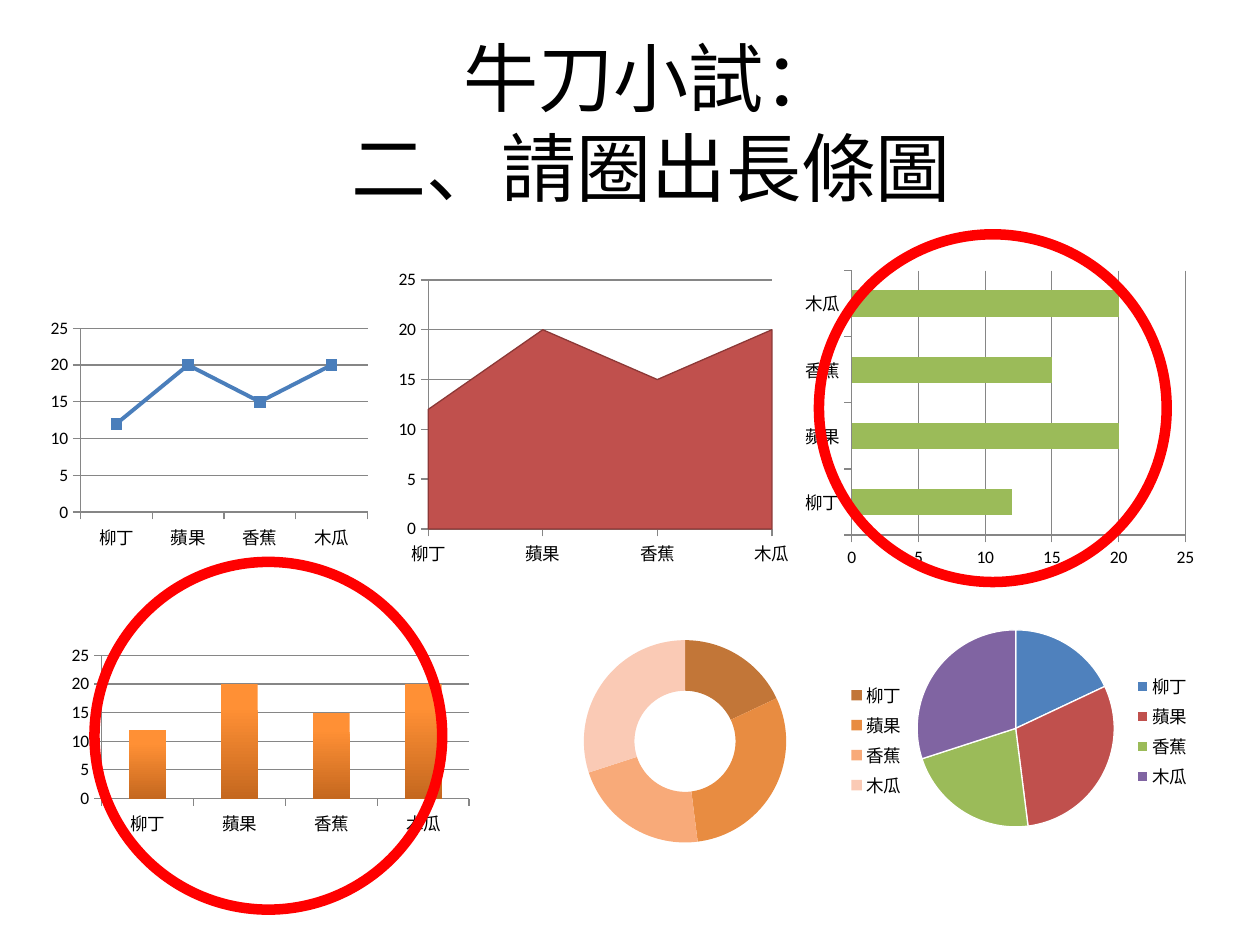
import pptx
import pptx.chart.data
import pptx.dml.color
import pptx.enum.chart
import pptx.enum.shapes
import pptx.enum.text
import pptx.oxml
import pptx.util
from pptx.util import Inches

FRUITS = ["柳丁", "蘋果", "香蕉", "木瓜"]
COUNTS = [12, 20, 15, 20]
SHARES = [18, 30, 22, 30]
KINDS = pptx.enum.chart.XL_CHART_TYPE
GREY = "868686"
THEME_COLOURS = ["4F81BD", "C0504D", "9BBB59", "8064A2"]
ORANGE_SHADES = ["C27638", "E88C41", "F8AA79", "FACAB5"]


def colour(code):
    return pptx.dml.color.RGBColor.from_string(code)


def paint(fill, code):
    fill.solid()
    fill.fore_color.rgb = colour(code)


def draw_line(line, code, width):
    line.color.rgb = colour(code)
    line.width = pptx.util.Pt(width)


def place_plot(chart, plot_box):
    """Fix the inner plot area, given as fractions of the chart."""
    area = chart._chartSpace.chart.plotArea
    for old in area.xpath("c:layout"):
        area.remove(old)
    left, top, width, height = plot_box
    area.insert(0, pptx.oxml.parse_xml(
        '<c:layout xmlns:c="http://schemas.openxmlformats.org/drawingml/2006/chart">'
        '<c:manualLayout><c:layoutTarget val="inner"/>'
        '<c:xMode val="edge"/><c:yMode val="edge"/>'
        f'<c:x val="{left}"/><c:y val="{top}"/><c:w val="{width}"/><c:h val="{height}"/>'
        '</c:manualLayout></c:layout>'))


def add_chart(page, kind, box, values, plot_box):
    data = pptx.chart.data.CategoryChartData()
    data.categories = FRUITS
    data.add_series("Series 1", values)
    chart = page.shapes.add_chart(kind, *map(Inches, box), data).chart
    chart.has_title = False
    chart.has_legend = False
    chart.font.name = "Calibri"
    chart.font.size = pptx.util.Pt(10)
    chart.font.color.rgb = colour("000000")
    place_plot(chart, plot_box)
    return chart


def add_axis_chart(page, kind, box, plot_box):
    """Add a chart of the counts and return its only series."""
    chart = add_chart(page, kind, box, COUNTS, plot_box)
    chart.plots[0].vary_by_categories = False
    for axis in (chart.category_axis, chart.value_axis):
        axis.major_tick_mark = pptx.enum.chart.XL_TICK_MARK.OUTSIDE
        axis.minor_tick_mark = pptx.enum.chart.XL_TICK_MARK.NONE
        draw_line(axis.format.line, GREY, 0.75)
    scale = chart.value_axis
    scale.minimum_scale, scale.maximum_scale, scale.major_unit = 0, 25, 5
    scale.has_major_gridlines = True
    draw_line(scale.major_gridlines.format.line, GREY, 0.75)
    if kind in (KINDS.BAR_CLUSTERED, KINDS.COLUMN_CLUSTERED):
        chart.plots[0].gap_width = 150
    return chart.plots[0].series[0]


def add_round_chart(page, kind, box, plot_box, codes, edge=None):
    chart = add_chart(page, kind, box, SHARES, plot_box)
    chart.has_legend = True
    chart.legend.position = pptx.enum.chart.XL_LEGEND_POSITION.RIGHT
    chart.legend.include_in_layout = False
    for index, code in enumerate(codes):
        look = chart.plots[0].series[0].points[index].format
        paint(look.fill, code)
        if edge:
            draw_line(look.line, edge, 0.75)
        else:
            look.line.fill.background()


def add_title(page, text):
    box = page.shapes.add_textbox(*map(Inches, (0.67, 0.21, 9, 1.51)))
    frame = box.text_frame
    frame.word_wrap = True
    frame.vertical_anchor = pptx.enum.text.MSO_ANCHOR.MIDDLE
    frame.text = text
    para = frame.paragraphs[0]
    para.alignment = pptx.enum.text.PP_ALIGN.CENTER
    for span in para.runs:
        span.font.name = "Calibri"
        span.font.size = pptx.util.Pt(42.9)
        span.font.color.rgb = colour("000000")


def add_answer_ring(page, left, top):
    ring = page.shapes.add_shape(pptx.enum.shapes.MSO_SHAPE.OVAL, Inches(left),
                                 Inches(top), Inches(2.76), Inches(2.76))
    ring.shadow.inherit = False
    ring.fill.background()
    draw_line(ring.line, "FF0000", 6)


def style_line(series):
    series.smooth = False
    draw_line(series.format.line, "4A7EBB", 2.25)
    series.marker.style = pptx.enum.chart.XL_MARKER_STYLE.SQUARE
    series.marker.size = 6
    paint(series.marker.format.fill, "4F81BD")
    draw_line(series.marker.format.line, "4A7EBB", 0.75)


def style_columns(series):
    fill = series.format.fill
    fill.gradient()
    fill.gradient_angle = 270
    for stop, code, position in zip(fill.gradient_stops, ("FF9035", "C5681F"), (0.2, 1)):
        stop.color.rgb = colour(code)
        stop.position = position


def main():
    deck = pptx.Presentation()
    deck.slide_width, deck.slide_height = Inches(10), Inches(7.5)
    page = deck.slides.add_slide(deck.slide_layouts[6])

    add_round_chart(page, KINDS.PIE, (7.13, 4.62, 2.42, 2.37),
                    (0.06, 0.16, 0.65, 0.66), THEME_COLOURS, "FFFFFF")
    style_line(add_axis_chart(page, KINDS.LINE_MARKERS_STACKED, (0.35, 2.49, 2.62, 1.92),
                              (0.11, 0.06, 0.87, 0.76)))
    style_columns(add_axis_chart(page, KINDS.COLUMN_CLUSTERED, (0.51, 5.09, 3.28, 1.58),
                                 (0.09, 0.07, 0.89, 0.72)))
    bars = add_axis_chart(page, KINDS.BAR_CLUSTERED, (6.34, 2.1, 3.23, 2.44),
                          (0.13, 0.02, 0.82, 0.86))
    paint(bars.format.fill, "9BBB59")
    add_round_chart(page, KINDS.DOUGHNUT, (4.13, 4.93, 3.15, 1.89),
                    (0.16, 0.08, 0.51, 0.85), ORANGE_SHADES)
    area = add_axis_chart(page, KINDS.AREA, (3.11, 2.1, 3.21, 2.44),
                          (0.09, 0.05, 0.85, 0.81))
    paint(area.format.fill, "C0504D")
    draw_line(area.format.line, "8C3836", 0.75)

    add_title(page, "牛刀小試：\v二、請圈出長條圖")
    add_answer_ring(page, 6.5, 1.86)
    add_answer_ring(page, 0.75, 4.46)
    deck.save("out.pptx")


if __name__ == "__main__":
    main()
